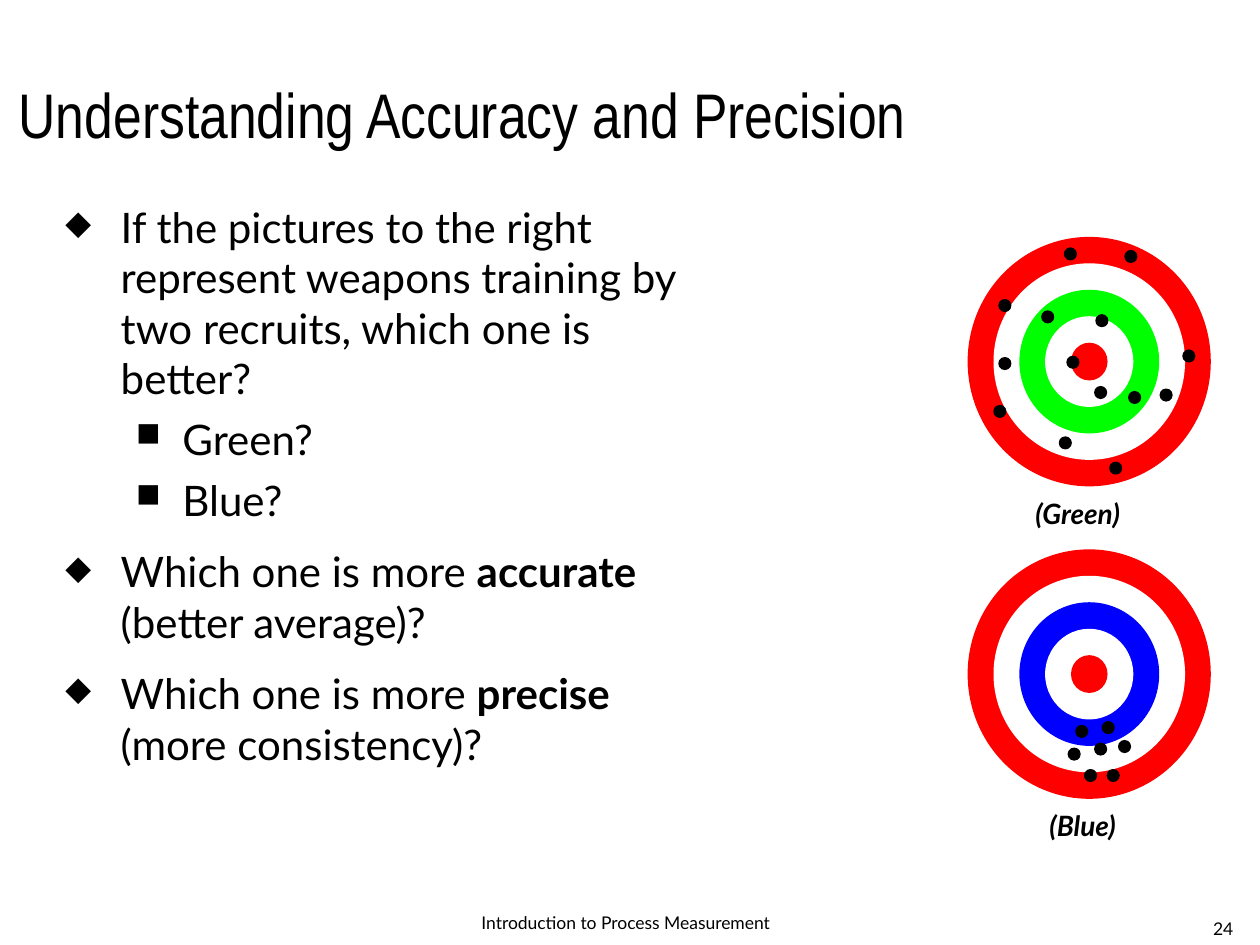
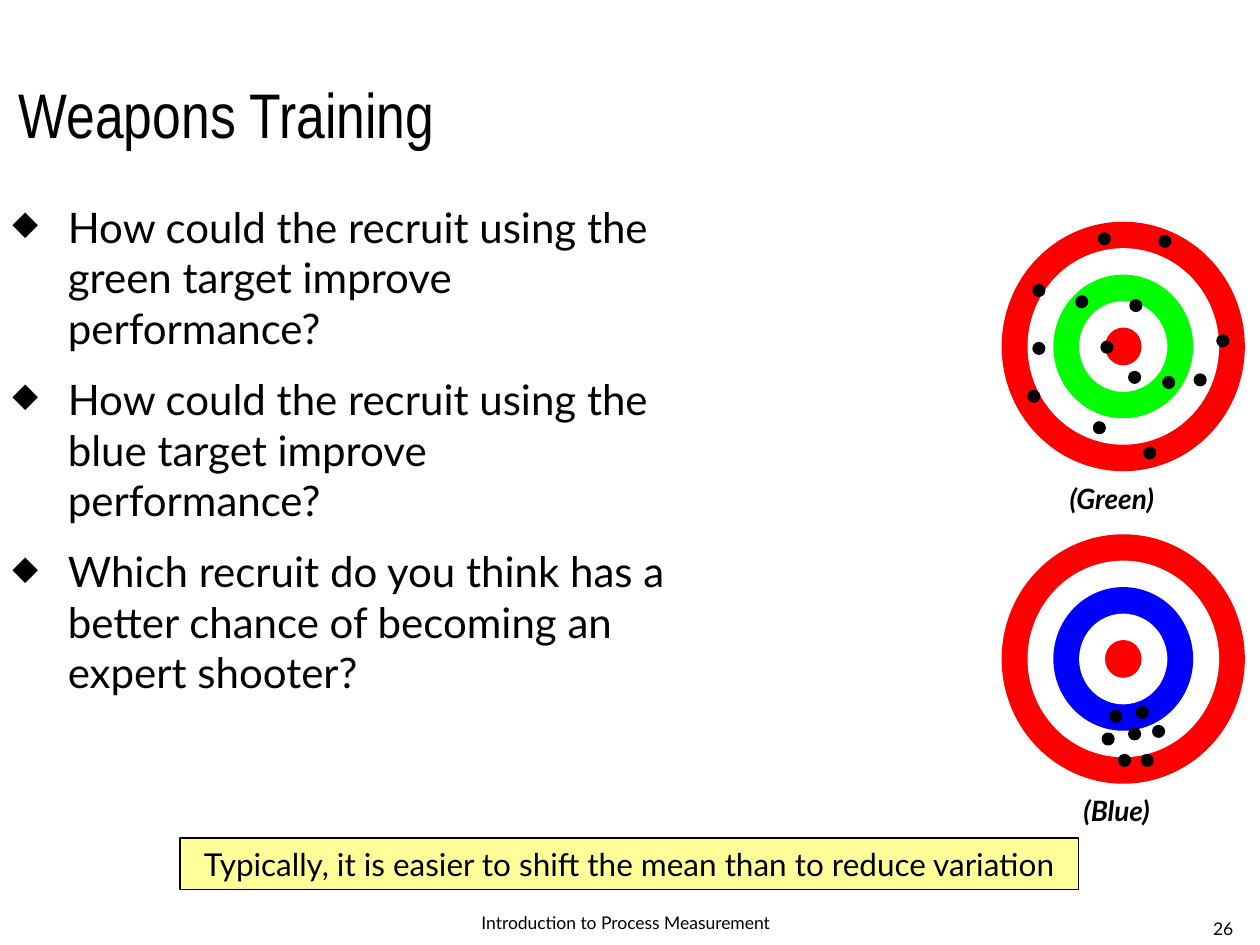
import pptx
import pptx.dml.color
import pptx.enum.shapes
import pptx.enum.text
import pptx.oxml
import pptx.oxml.ns
import pptx.util

Inches = pptx.util.Inches
Pt = pptx.util.Pt
ANCHOR = pptx.enum.text.MSO_ANCHOR
CENTER = pptx.enum.text.PP_ALIGN.CENTER
SHAPE = pptx.enum.shapes.MSO_SHAPE

COLORS = {
    "ink": "000000",
    "paper": "FFFFFF",
    "red": "FF0000",
    "green": "00FF00",
    "blue": "0000FF",
    "note": "FFFF99",
}
TITLE_FONT = "Arial Narrow"
TEXT_FONT = "Lato"

BULLETS = [
    {"char": "◆", "margin": 0.44, "hanging": 0.44, "before": 12},
    {"char": "■", "margin": 0.93, "hanging": 0.37, "before": 6},
]

TARGET_WIDTH, TARGET_HEIGHT = 1.93, 1.98
TARGET_PITCH = 2.48
RING_X, RING_Y = 0.205, 0.21
HOLE = 0.09
TARGETS = [
    {
        "color": "blue", "row": 1, "label": "(Blue)", "label_left": 0.55, "label_width": 1.0,
        "holes": [(0.86, 1.4), (1.07, 1.37), (1.01, 1.54), (1.2, 1.52),
                  (0.8, 1.58), (1.11, 1.75), (0.93, 1.75)],
    },
    {
        "color": "green", "row": 0, "label": "(Green)", "label_left": 0.44, "label_width": 1.2,
        "holes": [(1.13, 1.79), (1.25, 0.11), (0.25, 0.5), (0.59, 0.59), (0.77, 0.09),
                  (1.02, 0.62), (1.53, 1.21), (1.28, 1.23), (0.25, 0.96), (1.71, 0.9),
                  (0.21, 1.34), (0.73, 1.59), (0.79, 0.95), (1.01, 1.19)],
    },
]

SLIDES = [
    {
        "number": "24",
        "title": "Understanding Accuracy and Precision",
        "body_box": (0.42, 1.55, 5.24, 4.86),
        "body": [
            (0, ["If the pictures to the right represent weapons training by two recruits, "
                 "which one is better?"]),
            (1, ["Green?"]),
            (1, ["Blue?"]),
            (0, ["Which one is more ", "accurate", " (better average)?"]),
            (0, ["Which one is more ", "precise", " (more consistency)?"]),
        ],
        "targets_at": (7.68, 1.88),
        "note": None,
    },
    {
        "number": "26",
        "title": "Weapons Training",
        "body_box": (0, 1.55, 5.57, 4.19),
        "body": [
            (0, ["How could the recruit using the green target improve performance?"]),
            (0, ["How could the recruit using the blue target improve performance?"]),
            (0, ["Which recruit do you think has a better chance of becoming an expert shooter?"]),
        ],
        "targets_at": (7.95, 1.76),
        "note": "Typically, it is easier to shift the mean than to reduce variation",
    },
]


def add_text(slide, box, text, size, font=TEXT_FONT, bold=False, anchor=ANCHOR.TOP, align=None):
    frame = slide.shapes.add_textbox(*map(Inches, box)).text_frame
    frame.word_wrap = True
    frame.vertical_anchor = anchor
    paragraph = frame.paragraphs[0]
    paragraph.alignment = align
    run = paragraph.add_run()
    run.text = text
    run.font.size = Pt(size)
    run.font.name = font
    run.font.bold = run.font.italic = bold
    run.font.color.rgb = pptx.dml.color.RGBColor.from_string(COLORS["ink"])
    return paragraph


def add_filled(shapes, kind, box, color, outlined=False):
    shape = shapes.add_shape(kind, *map(Inches, box))
    shape.shadow.inherit = False
    shape.fill.solid()
    shape.fill.fore_color.rgb = pptx.dml.color.RGBColor.from_string(COLORS[color])
    if outlined:
        shape.line.color.rgb = pptx.dml.color.RGBColor.from_string(COLORS["ink"])
        shape.line.width = Pt(1)
    else:
        shape.line.fill.background()
    return shape


deck = pptx.Presentation()
deck.slide_width = Inches(10)
deck.slide_height = Inches(7.5)

for content in SLIDES:
    slide = deck.slides.add_slide(deck.slide_layouts[6])
    slide.background.fill.solid()
    slide.background.fill.fore_color.rgb = pptx.dml.color.RGBColor.from_string(COLORS["paper"])

    add_text(slide, (9.53, 7.25, 0.47, 0.25), content["number"], 10, anchor=ANCHOR.BOTTOM)
    add_text(slide, (2.12, 7.19, 5.69, 0.31), "Introduction to Process Measurement", 10,
             align=CENTER)
    title = add_text(slide, (0.05, 0.01, 8.31, 1.25), content["title"], 36, font=TITLE_FONT,
                     anchor=ANCHOR.BOTTOM)
    title.line_spacing = 0.9

    body = slide.shapes.add_textbox(*map(Inches, content["body_box"])).text_frame
    body.word_wrap = True
    for index, (level, pieces) in enumerate(content["body"]):
        bullet = BULLETS[level]
        point = body.add_paragraph() if index else body.paragraphs[0]
        point.level = level
        point.space_before = Pt(bullet["before"] if index else 0)
        properties = point._p.get_or_add_pPr()
        properties.set("marL", str(Inches(bullet["margin"])))
        properties.set("indent", str(-Inches(bullet["hanging"])))
        namespace = pptx.oxml.ns.nsdecls("a")
        for markup in (
            f'<a:buClr {namespace}><a:srgbClr val="{COLORS["ink"]}"/></a:buClr>',
            f'<a:buSzPct {namespace} val="80000"/>',
            f'<a:buChar {namespace} char="{bullet["char"]}"/>',
        ):
            properties.append(pptx.oxml.parse_xml(markup))
        for position, piece in enumerate(pieces):
            run = point.add_run()
            run.text = piece
            run.font.size = Pt(24)
            run.font.name = TEXT_FONT
            run.font.bold = position == 1
            run.font.color.rgb = pptx.dml.color.RGBColor.from_string(COLORS["ink"])

    if content["note"]:
        note = add_filled(slide.shapes, SHAPE.RECTANGLE, (1.43, 6.65, 7.13, 0.41), "note", True)
        note.text_frame.word_wrap = False
        sentence = note.text_frame.paragraphs[0]
        sentence.alignment = CENTER
        run = sentence.add_run()
        run.text = content["note"]
        run.font.size = Pt(18)
        run.font.name = TEXT_FONT
        run.font.color.rgb = pptx.dml.color.RGBColor.from_string(COLORS["ink"])

    left, first_top = content["targets_at"]
    for target in TARGETS:
        top = first_top + target["row"] * TARGET_PITCH
        rings = slide.shapes.add_group_shape().shapes
        for step, color in enumerate(["red", "paper", target["color"], "paper", "red"]):
            ring_box = (left + step * RING_X, top + step * RING_Y,
                        TARGET_WIDTH - 2 * step * RING_X, TARGET_HEIGHT - 2 * step * RING_Y)
            add_filled(rings, SHAPE.OVAL, ring_box, color)
        for x, y in target["holes"]:
            add_filled(rings, SHAPE.OVAL, (left + x, top + y, HOLE, HOLE), "ink", True)

    for target in reversed(TARGETS):
        label_top = first_top + target["row"] * TARGET_PITCH + 2.01
        add_text(slide, (left + target["label_left"], label_top, target["label_width"], 0.37),
                 target["label"], 16, bold=True)

deck.save("out.pptx")
